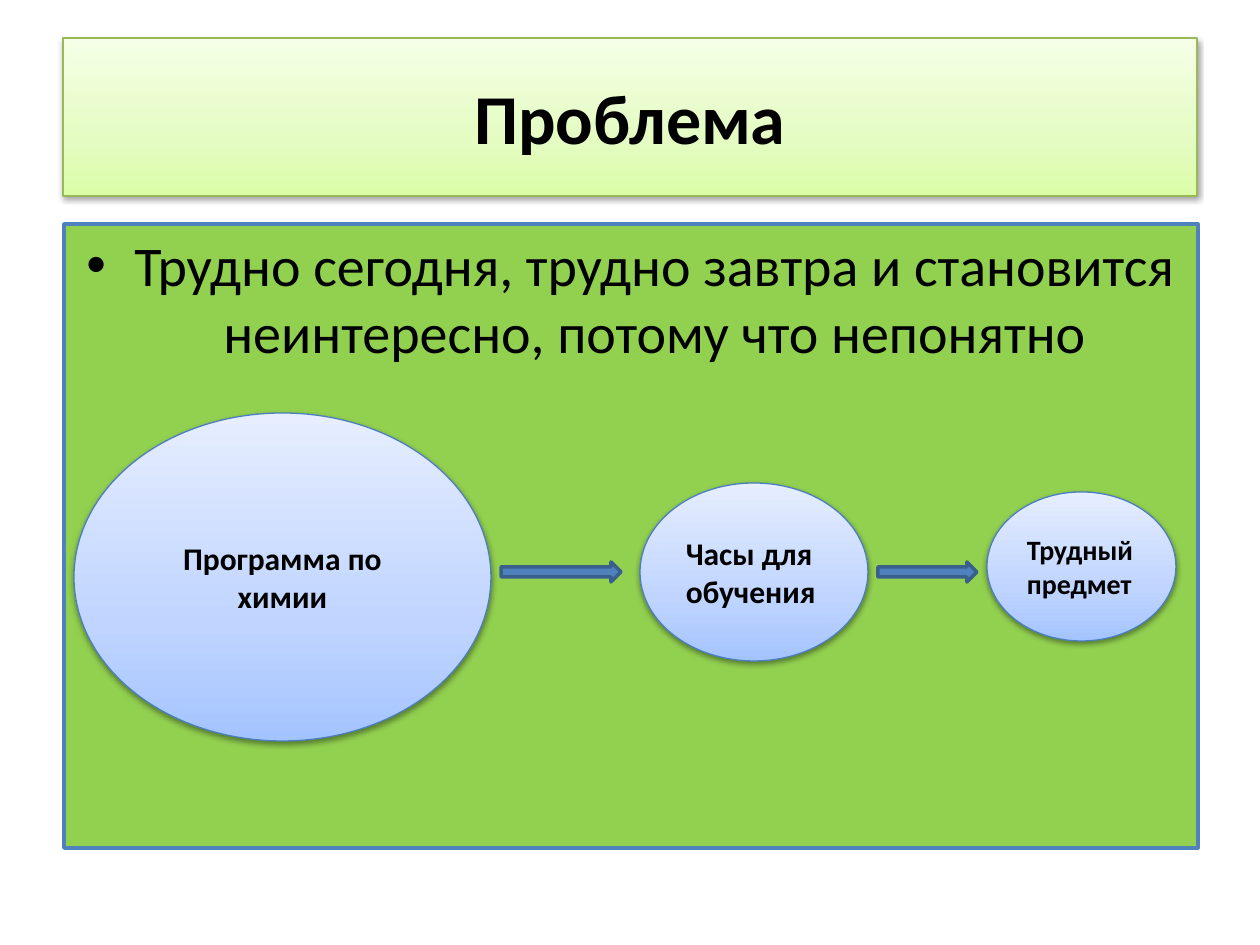
from dataclasses import dataclass

from lxml import etree
from pptx import Presentation
from pptx.dml.color import RGBColor
from pptx.enum.shapes import MSO_SHAPE
from pptx.enum.text import MSO_ANCHOR, MSO_AUTO_SIZE, PP_ALIGN
from pptx.oxml.ns import qn
from pptx.util import Pt

PX = 914400 / 126
RECTANGLE, OVAL, ARROW = MSO_SHAPE.RECTANGLE, MSO_SHAPE.OVAL, MSO_SHAPE.RIGHT_ARROW
LEFT, CENTER = PP_ALIGN.LEFT, PP_ALIGN.CENTER
TOP, MIDDLE = MSO_ANCHOR.TOP, MSO_ANCHOR.MIDDLE
NO_AUTOFIT = MSO_AUTO_SIZE.NONE


@dataclass(frozen=True)
class Theme:
    """Hold the colours and type sizes of the slide."""
    font: str = "Calibri"
    ink: str = "000000"
    green_fade: tuple = ((0, "DAFDA7"), (35, "E4FCC2"), (100, "F5FFE7"))
    blue_fade: tuple = ((0, "A4C4FF"), (35, "BFD4FF"), (100, "E6EEFF"))
    green_line: str = "98B955"
    oval_line: str = "4B7EBC"
    panel: str = "92D050"
    accent: str = "4F81BD"
    arrow_line: str = "3A5F8C"
    title_size: int = 40
    body_size: int = 32
    label_size: int = 18
    small_size: int = 16


THEME = Theme()


def px(length):
    """Turn pixels into EMU."""
    return round(length * PX)


def child(parent, tag, **attributes):
    """Append a DrawingML element to its parent."""
    values = {name: str(value) for name, value in attributes.items()}
    return etree.SubElement(parent, qn(tag), values)


def add_box(slide, geometry, box):
    """Add a preset shape inside a pixel box."""
    return slide.shapes.add_shape(geometry, *map(px, box))


def paint(shape, color, line, width):
    """Give a shape a flat fill, an outline and no shadow."""
    shape.fill.solid()
    shape.fill.fore_color.rgb = RGBColor.from_string(color)
    outline(shape, line, width)


def outline(shape, line, width):
    """Set the outline and clear the inherited shadow."""
    shape.line.color.rgb = RGBColor.from_string(line)
    shape.line.width = Pt(width)
    shape.shadow.inherit = False


def paint_raised(shape, fade, line):
    """Give a shape an upward gradient, a thin outline and a soft shadow."""
    shape.fill.gradient()
    shape.fill.gradient_angle = 90
    properties = shape.element.spPr
    stops = properties.find(qn("a:gradFill")).find(qn("a:gsLst"))
    for stop in list(stops):
        stops.remove(stop)
    for position, color in fade:
        child(child(stops, "a:gs", pos=position * 1000), "a:srgbClr", val=color)
    outline(shape, line, 0.75)
    shadow = child(properties.find(qn("a:effectLst")), "a:outerShdw", blurRad=40000,
                   dist=20000, dir=5400000, rotWithShape=0)
    child(child(shadow, "a:srgbClr", val=THEME.ink), "a:alpha", val=38000)


def write(shape, text, size, bold=False, align=CENTER, anchor=MIDDLE):
    """Write one formatted paragraph and return it."""
    frame = shape.text_frame
    frame.word_wrap = True
    frame.auto_size = NO_AUTOFIT
    frame.vertical_anchor = anchor
    paragraph = frame.paragraphs[0]
    paragraph.alignment = align
    run = paragraph.add_run()
    run.text = text
    run.font.name = THEME.font
    run.font.size = Pt(size)
    run.font.bold = bold
    run.font.color.rgb = RGBColor.from_string(THEME.ink)
    return paragraph


def add_heading(slide, box):
    """Place the slide title on a raised green band."""
    heading = slide.shapes.title
    heading.left, heading.top, heading.width, heading.height = map(px, box)
    paint_raised(heading, THEME.green_fade, THEME.green_line)
    write(heading, "Проблема", THEME.title_size, bold=True)


def add_statement(slide, box):
    """Place the green panel with its bulleted statement."""
    panel = add_box(slide, RECTANGLE, box)
    paint(panel, THEME.panel, THEME.accent, 2)
    statement = write(
        panel, "Трудно сегодня, трудно завтра и становится неинтересно, потому что непонятно",
        THEME.body_size, anchor=TOP)
    statement.space_before = Pt(THEME.body_size * 0.2)
    properties = statement._p.get_or_add_pPr()
    properties.set("marL", str(px(48)))
    properties.set("indent", str(px(-48)))
    child(properties, "a:buFont", typeface="Arial")
    child(properties, "a:buChar", char="•")


def add_chain(slide, box):
    """Place the shrinking ovals and the arrows between them."""
    left, top, _, _ = box
    stages = (
        ("Программа по химии", (0, 0, 417, 328), THEME.label_size, CENTER),
        ("Часы для обучения", (566, 70, 228, 178), THEME.label_size, LEFT),
        ("Трудный предмет", (913, 79, 189, 149), THEME.small_size, LEFT),
    )
    for label, (x, y, width, height), size, align in stages:
        oval = add_box(slide, OVAL, (left + x, top + y, width, height))
        paint_raised(oval, THEME.blue_fade, THEME.oval_line)
        write(oval, label, size, bold=True, align=align)
    gap, thickness = 10, 20
    for (_, before, _, _), (_, after, _, _) in zip(stages, stages[1:]):
        start = before[0] + before[2] + gap
        arrow = add_box(slide, ARROW, (left + start, top + 149,
                                       after[0] - gap - start - 9, thickness)
                        if before[0] == 0 else
                        (left + start, top + 149, after[0] - gap - start, thickness))
        paint(arrow, THEME.accent, THEME.arrow_line, 2)


def main():
    """Build and save the slide."""
    deck = Presentation()
    deck.slide_width, deck.slide_height = px(1260), px(945)
    slide = deck.slides.add_slide(deck.slide_layouts[5])
    add_heading(slide, (63, 38, 1134, 158))
    add_statement(slide, (64, 224, 1134, 624))
    add_chain(slide, (74, 413, 1102, 328))
    deck.save("out.pptx")


if __name__ == "__main__":
    main()
